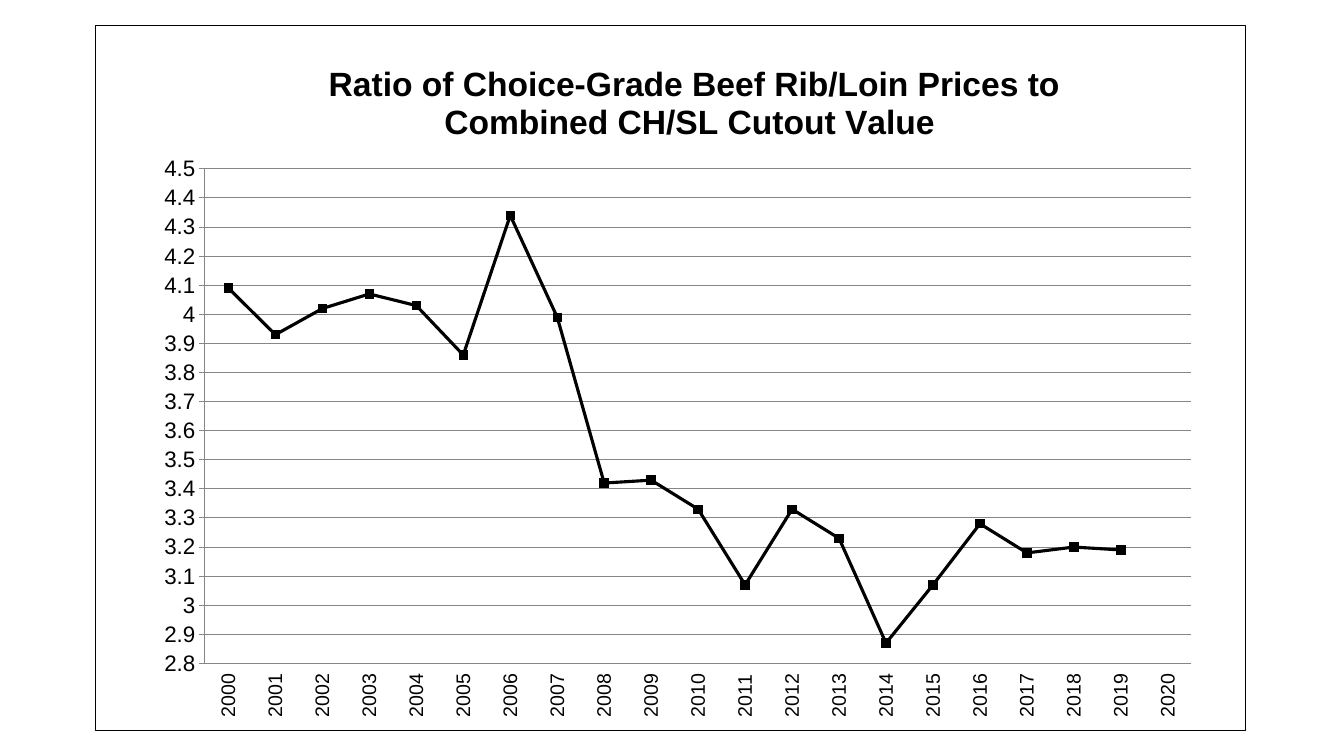
import pptx
import pptx.chart.data
import pptx.dml.color
import pptx.enum.chart
import pptx.oxml
import pptx.oxml.ns
import pptx.util
from pptx.util import Cm, Pt

TITLE_LINES = ["Ratio of Choice-Grade Beef Rib/Loin Prices to",
               "Combined CH/SL Cutout Value "]
FIRST_YEAR = 2000
RATIOS = [4.09, 3.93, 4.02, 4.07, 4.03, 3.86, 4.34, 3.99, 3.42, 3.43, 3.33,
          3.07, 3.33, 3.23, 2.87, 3.07, 3.28, 3.18, 3.2, 3.19, None]

BLACK = pptx.dml.color.RGBColor(0x00, 0x00, 0x00)
GREY = pptx.dml.color.RGBColor(0x86, 0x86, 0x86)

TICK = pptx.enum.chart.XL_TICK_MARK
RATIO_SCALE = {
    "minimum_scale": 2.8,
    "maximum_scale": 4.5,
    "major_unit": 0.1,
    "has_major_gridlines": True,
    "major_tick_mark": TICK.OUTSIDE,
    "minor_tick_mark": TICK.NONE,
}
YEAR_SCALE = {
    "has_major_gridlines": False,
    "major_tick_mark": TICK.NONE,
    "minor_tick_mark": TICK.NONE,
    "tick_label_position": pptx.enum.chart.XL_TICK_LABEL_POSITION.LOW,
}
PLOT_AREA = {"layoutTarget": "inner", "xMode": "edge", "yMode": "edge",
             "x": 0.095, "y": 0.203, "w": 0.858, "h": 0.702}
TITLE_PLACE = {"xMode": "edge", "yMode": "edge", "x": 0.2, "y": 0.05}


def set_layout(element, index, values):
    """Give a chart part a manual layout, as its child number index."""
    for old in element.findall(pptx.oxml.ns.qn("c:layout")):
        element.remove(old)
    entries = "".join(f'<c:{key} val="{value}"/>' for key, value in values.items())
    element.insert(index, pptx.oxml.parse_xml(
        f'<c:layout {pptx.oxml.ns.nsdecls("c")}>'
        f'<c:manualLayout>{entries}</c:manualLayout></c:layout>'))


def set_line(line, color, width):
    line.color.rgb = color
    line.width = Pt(width)


def format_axis(axis, settings, size):
    for key, value in settings.items():
        setattr(axis, key, value)
    axis.tick_labels.font.size = Pt(size)
    set_line(axis.format.line, GREY, 0.75)


def add_title(chart):
    frame = chart.chart_title.text_frame
    for number, words in enumerate(TITLE_LINES):
        paragraph = frame.add_paragraph() if number else frame.paragraphs[0]
        run = paragraph.add_run()
        run.text = words
        for key, value in {"size": Pt(24), "bold": True, "name": "Arial"}.items():
            setattr(run.font, key, value)
        run.font.color.rgb = BLACK
    chart.chart_title.include_in_layout = False
    set_layout(chart.chart_title._element, 1, TITLE_PLACE)


def add_border(chart):
    area = pptx.oxml.parse_xml(
        f'<c:spPr {pptx.oxml.ns.nsdecls("c", "a")}>'
        '<a:solidFill><a:srgbClr val="FFFFFF"/></a:solidFill>'
        f'<a:ln w="{Pt(0.75)}"><a:solidFill><a:srgbClr val="{BLACK}"/>'
        '</a:solidFill></a:ln></c:spPr>')
    chart._chartSpace.find(pptx.oxml.ns.qn("c:chart")).addnext(area)


def add_ratio_chart(slide):
    ratios = pptx.chart.data.CategoryChartData(number_format="General")
    ratios.categories = [str(FIRST_YEAR + step) for step in range(len(RATIOS))]
    ratios.add_series("Series 1", RATIOS)
    chart = slide.shapes.add_chart(
        pptx.enum.chart.XL_CHART_TYPE.LINE_MARKERS,
        Cm(2.4), Cm(0.64), Cm(29), Cm(17.78), ratios).chart

    chart.has_legend = False
    chart.font.name = "Arial"
    chart.font.size = Pt(18)
    chart.font.color.rgb = BLACK
    add_title(chart)
    add_border(chart)

    format_axis(chart.value_axis, RATIO_SCALE, 16)
    set_line(chart.value_axis.major_gridlines.format.line, GREY, 0.75)
    format_axis(chart.category_axis, YEAR_SCALE, 14)
    year_text = chart.category_axis._element.find(pptx.oxml.ns.qn("c:txPr"))
    year_text.find(pptx.oxml.ns.qn("a:bodyPr")).set("rot", "-5400000")

    plot = chart.plots[0]
    plot.vary_by_categories = False
    set_layout(plot._element.getparent(), 0, PLOT_AREA)
    ratio_line = plot.series[0]
    ratio_line.smooth = False
    set_line(ratio_line.format.line, BLACK, 2.25)
    marker = ratio_line.marker
    marker.style = pptx.enum.chart.XL_MARKER_STYLE.SQUARE
    marker.size = 6
    marker.format.fill.solid()
    marker.format.fill.fore_color.rgb = BLACK
    set_line(marker.format.line, BLACK, 0.75)


def main():
    deck = pptx.Presentation()
    deck.slide_width, deck.slide_height = Cm(33.87), Cm(19.05)
    blank_layout = deck.slide_layouts[6]
    add_ratio_chart(deck.slides.add_slide(blank_layout))
    deck.save("out.pptx")


if __name__ == "__main__":
    main()
